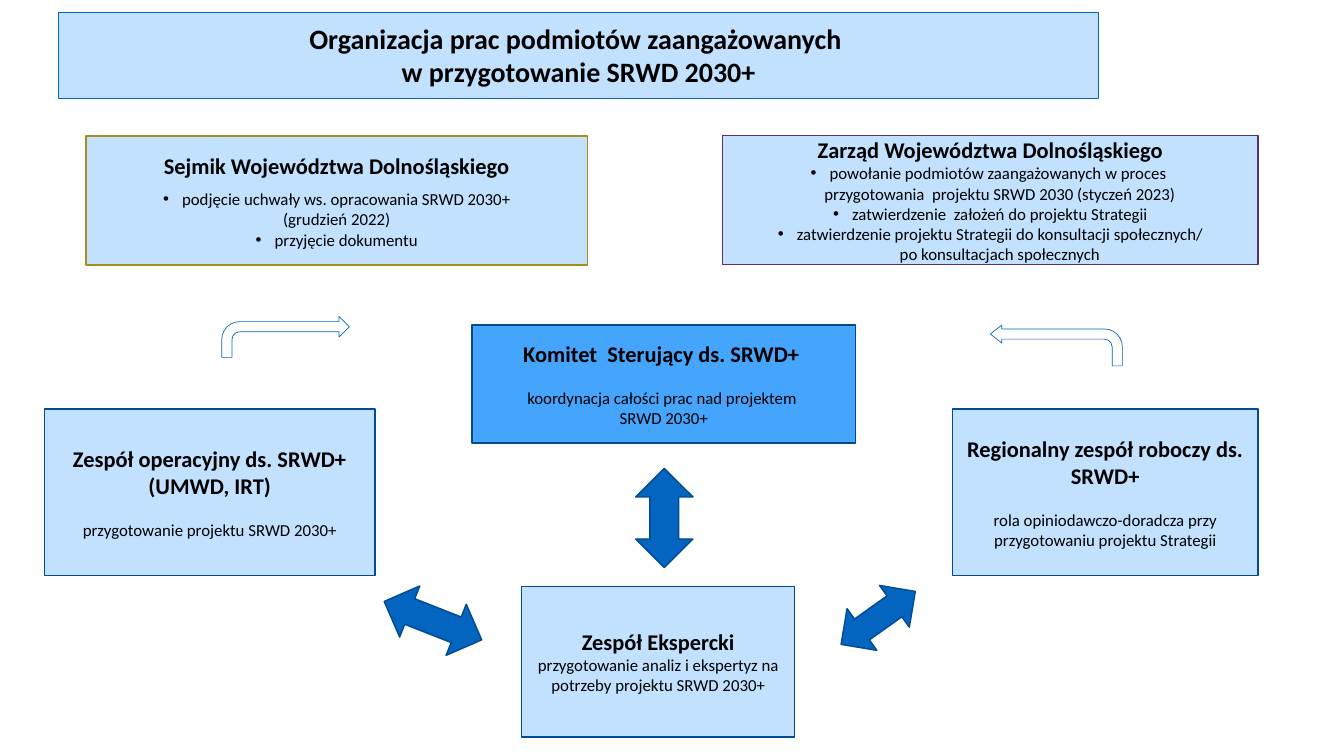
from lxml.etree import SubElement
from pptx import Presentation
from pptx.dml.color import RGBColor
from pptx.enum.shapes import MSO_SHAPE as SHAPE
from pptx.enum.text import MSO_ANCHOR as ANCHOR, MSO_AUTO_SIZE as AUTO_SIZE, PP_ALIGN as ALIGN
from pptx.oxml import parse_xml
from pptx.oxml.ns import nsdecls, qn
from pptx.util import Pt

FONT = "Calibri"
PALE, BRIGHT, BLUE, NAVY = "C1E1FE", "45A4FC", "0365C0", "024B8E"
GOLD, PURPLE, WHITE, BLACK = "A58E1A", "592F74", "FFFFFF", "000000"
BULLET_INDENT = Pt(27)
SMALL_GAP, GAP = 14.6, 29.3


def rgb(value):
    return RGBColor.from_string(value)


def place(shape, left, top, width, height):
    shape.left, shape.top = Pt(left), Pt(top)
    shape.width, shape.height = Pt(width), Pt(height)


def paint(shape, fill, line, line_width):
    shape.fill.solid()
    shape.fill.fore_color.rgb = rgb(fill)
    shape.line.color.rgb = rgb(line)
    shape.line.width = Pt(line_width)


def add_bullet(para):
    properties = para._p.get_or_add_pPr()
    properties.set("marL", str(BULLET_INDENT))
    properties.set("indent", str(-BULLET_INDENT))
    SubElement(properties, qn("a:buFont")).set("typeface", "Arial")
    SubElement(properties, qn("a:buChar")).set("char", "•")


def write(frame, text, size=24, bold=False, bullet=False, gap=0):
    """Append a centred paragraph; a newline in the text is a line break."""
    para = frame.paragraphs[0] if not frame.text else frame.add_paragraph()
    if bullet:
        add_bullet(para)
    para.alignment = ALIGN.CENTER
    para.space_before = Pt(gap)
    for index, line in enumerate(text.split("\n")):
        if index:
            para.add_line_break()
        span = para.add_run()
        span.text = line
        span.font.name, span.font.size, span.font.bold = FONT, Pt(size), bold
        span.font.color.rgb = rgb(BLACK)


def add_title(page, text):
    title = page.shapes.title
    place(title, 84, 17, 1485, 123)
    title._element.spPr.xfrm.addnext(
        parse_xml(f'<a:prstGeom {nsdecls("a")} prst="roundRect"><a:avLst/></a:prstGeom>'))
    paint(title, PALE, BLUE, 1)
    frame = title.text_frame
    frame.word_wrap, frame.auto_size = True, AUTO_SIZE.NONE
    frame.vertical_anchor = ANCHOR.MIDDLE
    write(frame, text, size=40, bold=True)


def add_shape(page, kind, bounds, fill, line, line_width=2):
    shape = page.shapes.add_shape(kind, *map(Pt, bounds))
    shape.shadow.inherit = False
    paint(shape, fill, line, line_width)
    return shape


def add_box(page, bounds, heading, details, fill=PALE, line=NAVY, gap=GAP):
    """Each detail is plain text, or a bullet item when it starts with a bullet sign."""
    box = add_shape(page, SHAPE.RECTANGLE, bounds, fill, line)
    frame = box.text_frame
    frame.word_wrap, frame.vertical_anchor = True, ANCHOR.MIDDLE
    write(frame, heading, size=32, bold=True)
    for index, detail in enumerate(details):
        write(frame, detail.removeprefix("•"), bullet=detail.startswith("•"),
              gap=0 if index else gap)


def add_double_arrow(page, kind, bounds, rotation=0):
    add_shape(page, kind, bounds, BLUE, NAVY).rotation = rotation


def add_bent_arrow(page, bounds, adjustments=(), flipped=False):
    arrow = add_shape(page, SHAPE.BENT_ARROW, bounds, WHITE, BLUE, line_width=1)
    for index, value in enumerate(adjustments):
        arrow.adjustments[index] = value
    if flipped:
        arrow._element.spPr.xfrm.set("flipH", "1")


def main():
    deck = Presentation()
    deck.slide_width, deck.slide_height = Pt(1920), Pt(1080)
    page = deck.slides.add_slide(deck.slide_layouts[5])

    add_title(page, "Organizacja prac podmiotów zaangażowanych \nw przygotowanie SRWD 2030+")

    add_box(page, (123, 194.4, 716, 184.3), "Sejmik Województwa Dolnośląskiego",
            ["•podjęcie uchwały ws. opracowania SRWD 2030+", "(grudzień 2022)",
             "•przyjęcie dokumentu"], line=GOLD, gap=SMALL_GAP)
    add_box(page, (1032.5, 193.7, 764.6, 184.3), "Zarząd Województwa Dolnośląskiego",
            ["•powołanie podmiotów zaangażowanych w proces \n"
             "przygotowania  projektu SRWD 2030 (styczeń 2023)",
             "•zatwierdzenie  założeń do projektu Strategii",
             "•zatwierdzenie projektu Strategii do konsultacji społecznych/\n"
             "po konsultacjach społecznych"], line=PURPLE, gap=0)
    add_box(page, (674, 464.4, 548.6, 168.5), "Komitet  Sterujący ds. SRWD+ ",
            ["koordynacja całości prac nad projektem ", "SRWD 2030+"], fill=BRIGHT)
    add_box(page, (63.4, 584, 472.3, 238.3), "Zespół operacyjny ds. SRWD+ (UMWD, IRT)",
            ["przygotowanie projektu SRWD 2030+"])
    add_box(page, (745.2, 838, 390.2, 214.6), "Zespół Ekspercki",
            ["przygotowanie analiz i ekspertyz na potrzeby projektu SRWD 2030+"], gap=0)
    add_box(page, (1360.8, 584, 436.3, 238.3), "Regionalny zespół roboczy ds. SRWD+",
            ["rola opiniodawczo-doradcza przy", "przygotowaniu projektu Strategii"])

    add_double_arrow(page, SHAPE.UP_DOWN_ARROW, (908, 669, 82, 142))
    add_double_arrow(page, SHAPE.LEFT_RIGHT_ARROW, (543.6, 847.4, 149.8, 78.5), rotation=21.5)
    add_double_arrow(page, SHAPE.LEFT_RIGHT_ARROW, (1189.4, 846, 130.3, 73.4), rotation=144.5)
    add_bent_arrow(page, (316.8, 452.2, 182.2, 58.3))
    add_bent_arrow(page, (1414.8, 464.4, 188.6, 58.3), (0.25, 0.22, 0.28, 0.44), flipped=True)

    deck.save("out.pptx")


if __name__ == "__main__":
    main()
